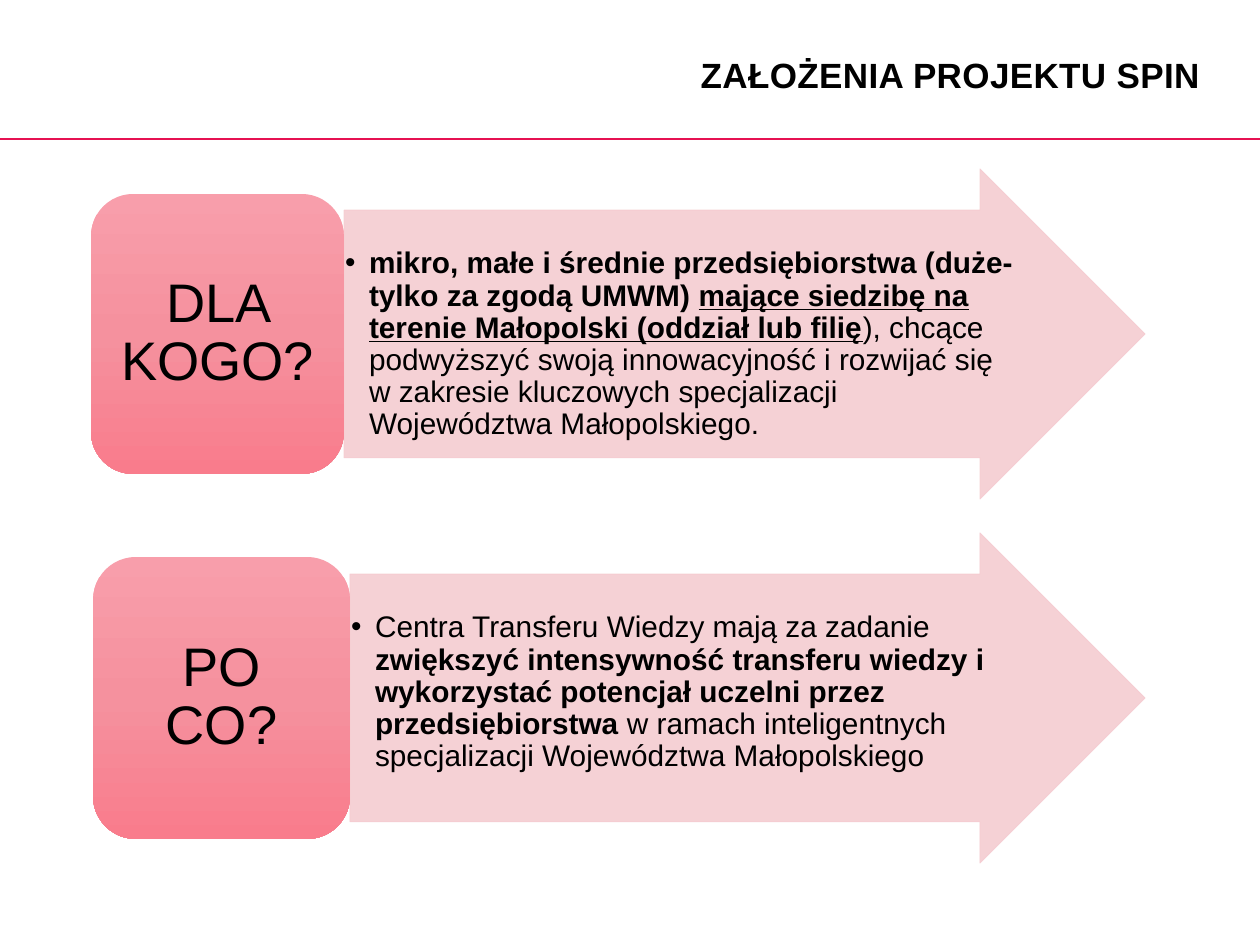
"""Build the SPIN project slide: two topic blocks, each with an arrow of details."""
from copy import deepcopy

from lxml.etree import SubElement as Sub
from pptx import Presentation
from pptx.dml.color import RGBColor as Rgb
from pptx.enum.shapes import MSO_CONNECTOR as Link, MSO_SHAPE as Kind
from pptx.enum.text import MSO_ANCHOR as Anchor, PP_ALIGN as Align
from pptx.oxml.ns import qn
from pptx.util import Emu, Pt

TITLE = "ZAŁOŻENIA PROJEKTU SPIN"
ROWS = [
    {
        "label": "DLA KOGO?",
        "block": (91, 194, 253, 280),
        "runs": [
            ("mikro, małe i średnie przedsiębiorstwa (duże-tylko za zgodą UMWM) ", {"bold": True}),
            ("mające siedzibę na terenie Małopolski (oddział lub filię", {"bold": True, "underline": True}),
            ("), chcące podwyższyć swoją innowacyjność i rozwijać się w zakresie "
             "kluczowych specjalizacji Województwa Małopolskiego.", {}),
        ],
    },
    {
        "label": "PO CO?",
        "block": (93, 557, 257, 282),
        "runs": [
            ("Centra Transferu Wiedzy mają za zadanie ", {}),
            ("zwiększyć intensywność transferu wiedzy i wykorzystać potencjał "
             "uczelni przez przedsiębiorstwa ", {"bold": True}),
            ("w ramach inteligentnych specjalizacji Województwa Małopolskiego", {}),
        ],
    },
]
THEME = {
    "font": "Arial", "ink": "000000", "rule": "E61152", "arrow": "F5CCD1",
    "grad": [(0, "F89EAB"), (0.5, "F5919E"), (1, "F97C8C")],
    "title": 20, "label": 31, "body": 17, "lines": 0.9,
}
TIP, HIGH, HEAD, PAD, HANG = 1145, 330, 124, 12, 24


def px(n):
    return Emu(round(n * 914400 / 126))


def put(obj, vals):
    for key, val in vals.items():
        setattr(obj, key, val)


def place(shape, box):
    put(shape, dict(zip(("left", "top", "width", "height"), map(px, box))))


def frame(shape, anchor, ins):
    names = ("margin_left", "margin_top", "margin_right", "margin_bottom")
    text = shape.text_frame
    put(text, {"word_wrap": True, "vertical_anchor": anchor, **dict(zip(names, map(px, ins)))})
    return text.paragraphs[0]


def write(par, runs, size, align):
    put(par, {"alignment": align, "line_spacing": THEME["lines"]})
    for text, look in runs:
        run = par.add_run()
        run.text = text
        put(run.font, {"name": THEME["font"], "size": Pt(THEME[size]), "bold": False, **look})
        run.font.color.rgb = Rgb.from_string(THEME["ink"])


def bullet(par):
    props = par._p.get_or_add_pPr()
    put_xml = {"marL": px(HANG), "indent": -px(HANG)}
    for key, val in put_xml.items():
        props.set(key, str(int(val)))
    Sub(props, qn("a:buFont"), typeface=THEME["font"])
    Sub(props, qn("a:buChar"), char="•")


def add_head(slide):
    head = slide.shapes.title
    place(head, (290, 47, 910, 60))
    par = frame(head, Anchor.MIDDLE, (0, 0, 0, 0))
    write(par, [(TITLE, {"bold": True})], "title", Align.RIGHT)
    par.runs[0].font._element.set("spc", "20")
    rule = slide.shapes.add_connector(Link.STRAIGHT, 0, px(139), px(1260), px(139))
    rule.line.color.rgb = Rgb.from_string(THEME["rule"])
    rule.line.width = Pt(1.25)
    Sub(rule._element.spPr, qn("a:effectLst"))


def add_arrow(slide, box):
    arrow = slide.shapes.add_shape(Kind.RIGHT_ARROW, *map(px, box))
    arrow.shadow.inherit = False
    arrow.adjustments[0], arrow.adjustments[1] = 0.75, 0.5
    arrow.fill.solid()
    arrow.line.width = Pt(0.5)
    for fill in (arrow.fill, arrow.line.fill):
        fill.solid()
        fill.fore_color.rgb = Rgb.from_string(THEME["arrow"])
    for tone in arrow._element.spPr.iter(qn("a:srgbClr")):
        Sub(tone, qn("a:alpha"), val="90000")


def add_block(slide, box):
    block = slide.shapes.add_shape(Kind.ROUNDED_RECTANGLE, *map(px, box))
    block.shadow.inherit = False
    block.line.fill.background()
    block.fill.gradient()
    block.fill.gradient_angle = 270
    stops = block._element.spPr.find(".//" + qn("a:gsLst"))
    stops.append(deepcopy(stops[-1]))
    for stop, (pos, tone) in zip(block.fill.gradient_stops, THEME["grad"]):
        stop.position = pos
        stop.color.rgb = Rgb.from_string(tone)


def add_text(slide, box, anchor, ins):
    area = slide.shapes.add_textbox(*map(px, box))
    return frame(area, anchor, ins)


def add_row(slide, row):
    left, top, wide, high = row["block"]
    start = left + wide
    peak = top + (high - HIGH) // 2
    span = TIP - start
    add_arrow(slide, (start, peak, span, HIGH))
    par = add_text(slide, (start, peak + HIGH / 8, span - HEAD, HIGH * 0.75), Anchor.TOP, (1, 38, 1, 1))
    bullet(par)
    write(par, row["runs"], "body", Align.LEFT)
    add_block(slide, row["block"])
    inner = (left + PAD, top + PAD, wide - 2 * PAD, high - 2 * PAD)
    par = add_text(slide, inner, Anchor.MIDDLE, (16, 8, 16, 8))
    write(par, [(row["label"], {})], "label", Align.CENTER)


def main():
    deck = Presentation()
    put(deck, {"slide_width": px(1260), "slide_height": px(945)})
    slide = deck.slides.add_slide(deck.slide_layouts[5])
    add_head(slide)
    for row in ROWS:
        add_row(slide, row)
    deck.save("out.pptx")


if __name__ == "__main__":
    main()
